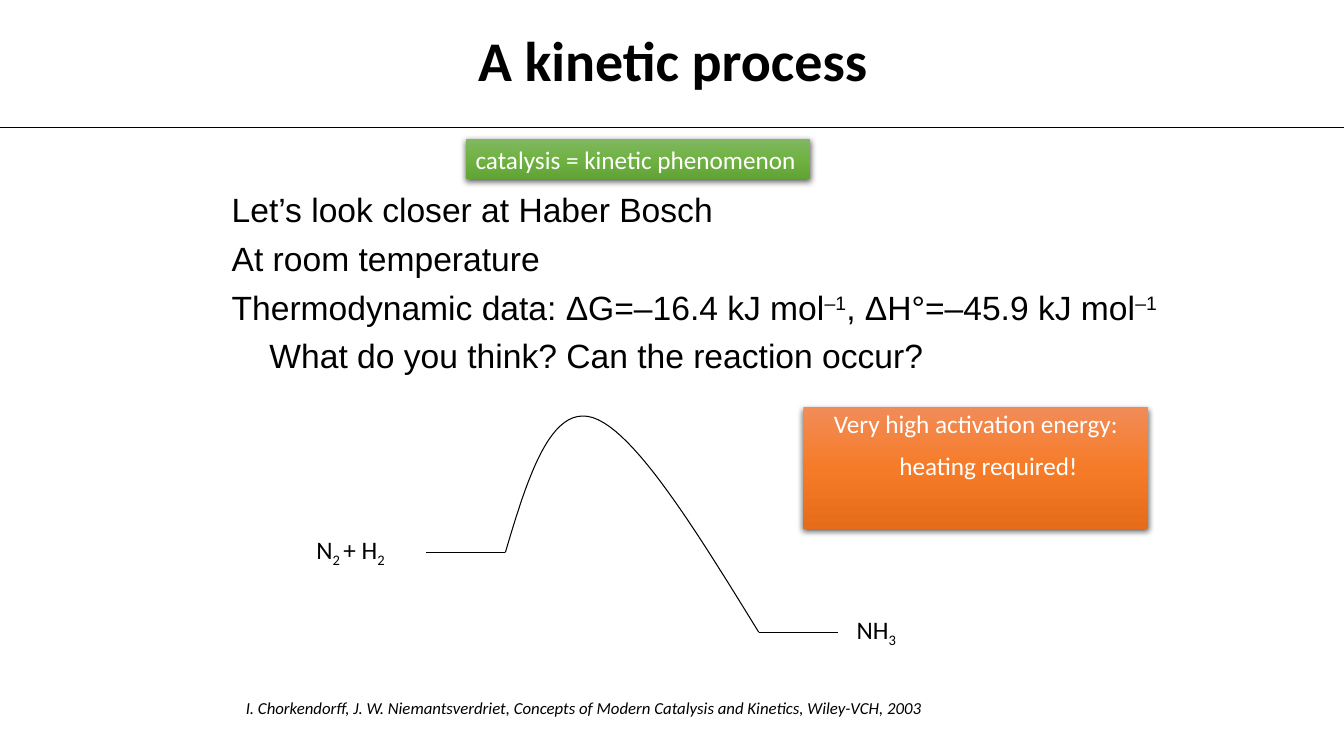
from dataclasses import dataclass

from lxml import etree
from pptx import Presentation
from pptx import util as u
from pptx.dml.color import RGBColor
from pptx.enum import shapes, text
from pptx.oxml import ns


@dataclass(frozen=True)
class Theme:
    """Colours, fonts and type sizes of the slide."""
    ink: str = "000000"
    paper: str = "FFFFFF"
    green: tuple = ("81B861", "6FB242", "62A336")
    orange: tuple = ("F18C57", "F67B28", "E56C19")
    heading_font: str = "Calibri"
    body_font: str = "Arial"
    title: int = 40
    body: int = 24
    label: int = 18
    source: int = 12
    raised: int = 30000
    lowered: int = -25000


class Painter:
    """Draws styled elements on the current slide."""

    def __init__(self, page, theme):
        self.page = page
        self.theme = theme

    def add_node(self, parent, tag, **attributes):
        return etree.SubElement(parent, ns.qn(tag), attributes)

    def fill_text(self, box, paragraphs, size, color=None, font=None, bold=False, italic=False,
                  align=text.PP_ALIGN.LEFT, hanging=0, gap=0, leading=None, wrap=True):
        frame = box.text_frame
        frame.word_wrap = wrap
        frame.vertical_anchor = text.MSO_ANCHOR.TOP
        for index, spans in enumerate(paragraphs):
            para = frame.add_paragraph() if index else frame.paragraphs[0]
            para.alignment = align
            if index:
                para.space_before = u.Pt(gap)
            if leading:
                para.line_spacing = leading
            if hanging:
                properties = para._p.get_or_add_pPr()
                properties.set("marL", str(u.Pt(hanging)))
                properties.set("indent", str(-u.Pt(hanging)))
            for words, baseline in spans:
                span = para.add_run()
                span.text = words
                span.font.name = font or self.theme.heading_font
                span.font.size = u.Pt(size)
                span.font.bold = bold
                span.font.italic = italic
                span.font.color.rgb = RGBColor.from_string(color or self.theme.ink)
                if baseline:
                    span._r.get_or_add_rPr().set("baseline", str(baseline))

    def label(self, left, top, width, height, paragraphs, size, **style):
        box = self.page.shapes.add_textbox(u.Pt(left), u.Pt(top), u.Pt(width), u.Pt(height))
        self.fill_text(box, paragraphs, size, **style)

    def callout(self, left, top, width, height, colors, paragraphs, **style):
        box = self.page.shapes.add_shape(
            shapes.MSO_SHAPE.RECTANGLE, u.Pt(left), u.Pt(top), u.Pt(width), u.Pt(height))
        box.line.fill.background()
        box.fill.gradient()
        gradient = box._element.spPr.find(ns.qn("a:gradFill"))
        for child in list(gradient):
            gradient.remove(child)
        stops = self.add_node(gradient, "a:gsLst")
        for index, color in enumerate(colors):
            stop = self.add_node(stops, "a:gs", pos=str(index * 50000))
            self.add_node(stop, "a:srgbClr", val=color)
        self.add_node(gradient, "a:lin", ang="5400000", scaled="0")
        box.shadow.inherit = False
        effects = box._element.spPr.find(ns.qn("a:effectLst"))
        shadow = self.add_node(effects, "a:outerShdw", blurRad=str(u.Pt(4.5)),
                               dist=str(u.Pt(1.5)), dir="5400000", rotWithShape="0")
        shade = self.add_node(shadow, "a:srgbClr", val=self.theme.ink)
        self.add_node(shade, "a:alpha", val="63000")
        self.fill_text(box, paragraphs, self.theme.label, color=self.theme.paper, **style)

    def stroke(self, line, weight):
        line.color.rgb = RGBColor.from_string(self.theme.ink)
        line.width = u.Pt(weight)

    def level(self, left, right, y, weight=0.75):
        line = self.page.shapes.add_connector(
            shapes.MSO_CONNECTOR.STRAIGHT, u.Pt(left), u.Pt(y), u.Pt(right), u.Pt(y))
        self.stroke(line.line, weight)
        self.add_node(line._element.spPr, "a:effectLst")

    def curve(self, start, segments, steps=24):
        points, origin = [], start
        for first, second, end in segments:
            for step in range(1, steps + 1):
                t = step / steps
                points.append(tuple(
                    u.Pt((1 - t) ** 3 * a + 3 * (1 - t) ** 2 * t * b
                         + 3 * (1 - t) * t ** 2 * c + t ** 3 * d)
                    for a, b, c, d in zip(origin, first, second, end)))
            origin = end
        builder = self.page.shapes.build_freeform(u.Pt(start[0]), u.Pt(start[1]))
        builder.add_line_segments(points, close=False)
        barrier = builder.convert_to_shape()
        barrier.fill.background()
        barrier.shadow.inherit = False
        self.stroke(barrier.line, 0.75)


def main():
    """Build the slide on the kinetics of ammonia synthesis."""
    theme = Theme()
    deck = Presentation()
    deck.slide_width, deck.slide_height = u.Pt(960), u.Pt(540)
    page = deck.slides.add_slide(deck.slide_layouts[6])
    painter = Painter(page, theme)
    center = text.PP_ALIGN.CENTER
    reactants, products = (361, 394.6), (542, 451.6)
    step_width = 56.5

    painter.label(42, 14.4, 877, 55.4, [[("A kinetic process", 0)]], theme.title,
                  bold=True, align=center)
    painter.level(0, 960, 91, weight=0.5)
    painter.label(158.4, 131.5, 680.4, 388, [
        [("Let’s look closer at Haber Bosch", 0)],
        [("At room temperature", 0)],
        [("Thermodynamic data: ΔG=–16.4 kJ mol", 0), ("–1", theme.raised),
         (", ΔH°=–45.9 kJ mol", 0), ("–1", theme.raised)],
        [("\tWhat do you think? Can the reaction occur?", 0)],
    ], theme.body, font=theme.body_font, hanging=27, gap=6)
    painter.callout(573.8, 290.9, 246.6, 87.1, theme.orange, [
        [("Very high activation energy:", 0)],
        [("\theating required!", 0)],
    ], align=center, hanging=18, gap=10, leading=0.9)
    painter.label(168.5, 494.6, 584, 21.6, [
        [("I. Chorkendorff, J. W. Niemantsverdriet, Concepts of Modern Catalysis "
          "and Kinetics, Wiley-VCH, 2003", 0)],
    ], theme.source, italic=True)
    painter.level(reactants[0] - step_width, reactants[0], reactants[1])
    painter.level(products[0], products[0] + step_width, products[1])
    painter.label(604.8, 435, 43.9, 28.8, [[("NH", 0), ("3", theme.lowered)]],
                  theme.label, wrap=False)
    painter.label(218.9, 378, 66.2, 28.8, [
        [("N", 0), ("2 ", theme.lowered), ("+ H", 0), ("2", theme.lowered)],
    ], theme.label, wrap=False)
    painter.curve(reactants, [
        ((376.6, 342), (393.1, 288.7), (423.4, 298.3)),
        ((453.6, 308), (497.5, 379.4), products),
    ])
    painter.callout(332.6, 99.4, 246.2, 28.8, theme.green,
                    [[("catalysis = kinetic phenomenon", 0)]], wrap=False)
    deck.save("out.pptx")


if __name__ == "__main__":
    main()
